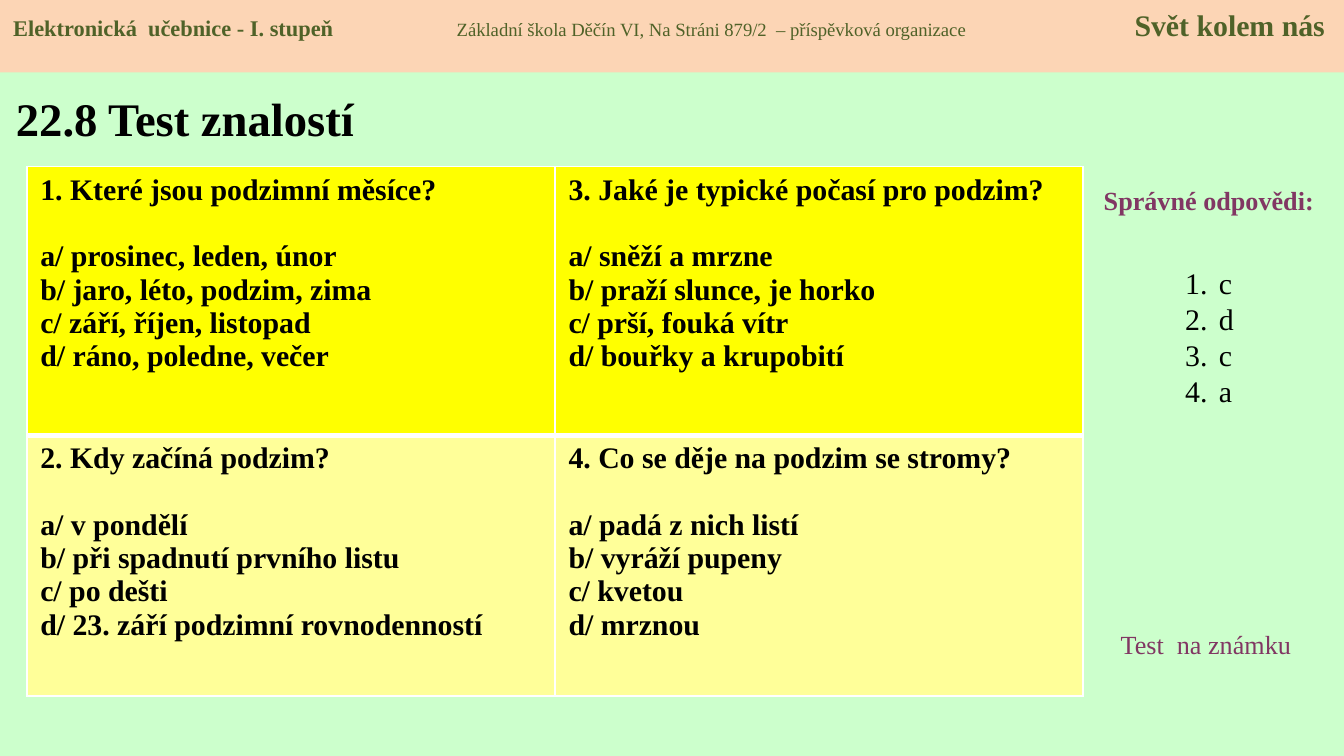
from lxml import etree
from pptx import Presentation
from pptx import util as u
from pptx.dml.color import RGBColor
from pptx.enum import shapes, text
from pptx.oxml.ns import qn


def paint(fill, shade):
    fill.solid()
    fill.fore_color.rgb = RGBColor.from_string(shade)


def write(para, words, size, shade, bold=False):
    run = para.add_run()
    run.text = words
    form = {"name": "Times New Roman", "size": u.Pt(size), "bold": bold}
    for key, value in form.items():
        setattr(run.font, key, value)
    paint(run.font.fill, shade)


deck = Presentation()
deck.slide_width = u.Inches(10)
deck.slide_height = u.Inches(10 * 9 / 16)
slide = deck.slides.add_slide(deck.slide_layouts[6])
paint(slide.background.fill, "CCFFCC")

start, left, center = text.MSO_ANCHOR.TOP, text.PP_ALIGN.LEFT, text.PP_ALIGN.CENTER
labels = [
    ((0.02, 0.55, 3.19, 0.65), "22.8 Test znalostí", 25, "000000", True, left, text.MSO_ANCHOR.MIDDLE),
    ((8.05, 1.32, 1.89, 0.34), "Správné odpovědi:", 14, "813763", True, center, start),
    ((8.24, 4.63, 1.57, 0.34), "Test  na známku", 14, "813763", False, left, start),
]
for place, words, size, shade, bold, align, anchor in labels:
    frame = slide.shapes.add_textbox(*map(u.Inches, place)).text_frame
    for key, value in {"word_wrap": True, "vertical_anchor": anchor}.items():
        setattr(frame, key, value)
    frame.paragraphs[0].alignment = align
    write(frame.paragraphs[0], words, size, shade, bold)

tests = [
    [
        ["1. Které jsou podzimní měsíce?", "a/ prosinec, leden, únor",
         "b/ jaro, léto, podzim, zima", "c/ září, říjen, listopad", "d/ ráno, poledne, večer"],
        ["3. Jaké je typické počasí pro podzim?", "a/ sněží a mrzne",
         "b/ praží slunce, je horko", "c/ prší, fouká vítr", "d/ bouřky a krupobití"],
    ],
    [
        ["2. Kdy začíná podzim?", "a/ v pondělí",
         "b/ při spadnutí prvního listu", "c/ po dešti", "d/ 23. září podzimní rovnodenností"],
        ["4. Co se děje na podzim se stromy?", "a/ padá z nich listí",
         "b/ vyráží pupeny", "c/ kvetou", "d/ mrznou"],
    ],
]
place = (0.2, 1.24, 7.86, 3.94)
table = slide.shapes.add_table(2, 2, *map(u.Inches, place)).table
table.first_row = table.horz_banding = False
for col in table.columns:
    col.width = u.Inches(3.93)
rows = [(2, "FFFF00", "lnB"), (1.94, "FFFF99", "lnT")]
for r, (height, shade, thick) in enumerate(rows):
    table.rows[r].height = u.Inches(height)
    for c, lines in enumerate(tests[r]):
        cell = table.cell(r, c)
        paint(cell.fill, shade)
        for i, words in enumerate(lines):
            frame = cell.text_frame
            para = frame.add_paragraph() if i else frame.paragraphs[0]
            para.space_after = u.Pt(0 if i else 18)
            write(para, words, 16, "000000", True)
        props = cell._tc.get_or_add_tcPr()
        for i, side in enumerate(["lnL", "lnR", "lnT", "lnB"]):
            edge = etree.Element(qn("a:" + side), w=str(u.Pt(3 if side == thick else 1)))
            fill = etree.SubElement(edge, qn("a:solidFill"))
            etree.SubElement(fill, qn("a:srgbClr"), val="FFFFFF")
            props.insert(i, edge)

place = (8.72, 1.65, 0.55, 1.99)
frame = slide.shapes.add_textbox(*map(u.Inches, place)).text_frame
frame.word_wrap = True
frame.margin_top = u.Inches(0.32)
for i, words in enumerate("cdca"):
    para = frame.add_paragraph() if i else frame.paragraphs[0]
    write(para, words, 16, "000000")
    props = para._p.get_or_add_pPr()
    props.set("marL", str(u.Inches(0.25)))
    props.set("indent", str(u.Inches(-0.25)))
    etree.SubElement(props, qn("a:buFont"), typeface="+mj-lt")
    etree.SubElement(props, qn("a:buAutoNum"), type="arabicPeriod")

place = (0, 0, 10, 0.54)
band = slide.shapes.add_shape(shapes.MSO_SHAPE.RECTANGLE, *map(u.Inches, place))
band.shadow.inherit = False
paint(band.fill, "FCD5B5")
band.line.fill.background()
band.text_frame.vertical_anchor = start
para = band.text_frame.paragraphs[0]
para.alignment = left
tabs = etree.SubElement(para._p.get_or_add_pPr(), qn("a:tabLst"))
for pos, align in [(3.3, "l"), (9.76, "r")]:
    etree.SubElement(tabs, qn("a:tab"), pos=str(u.Inches(pos)), algn=align)
parts = [
    ("Elektronická  učebnice - I. stupeň\t", 12, True),
    ("Základní škola Děčín VI, Na Stráni 879/2  – příspěvková organizace\t", 10, False),
    ("Svět kolem nás", 16, True),
]
for words, size, bold in parts:
    write(para, words, size, "4F6228", bold)

deck.save("out.pptx")
